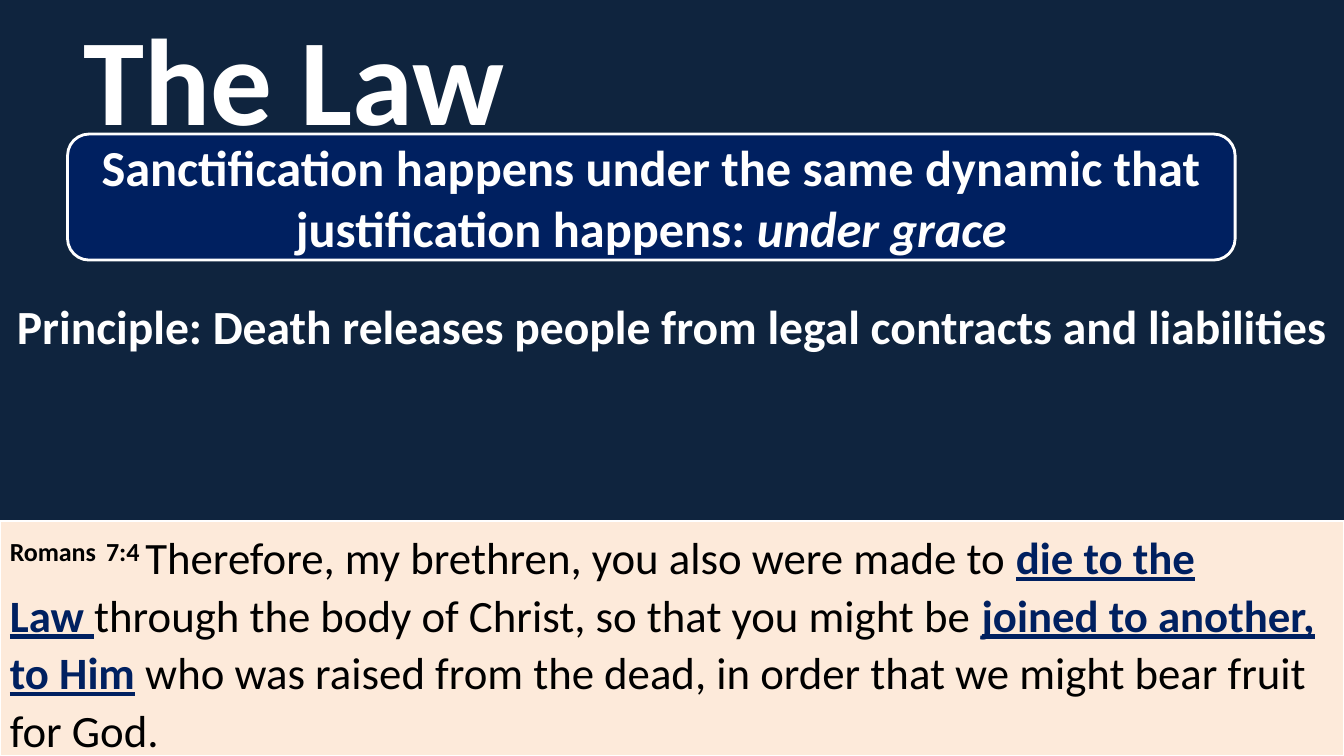
from dataclasses import dataclass

from pptx import Presentation
from pptx.dml.color import RGBColor as RGB
from pptx.enum.shapes import MSO_SHAPE as Form
from pptx.enum.text import MSO_ANCHOR as Anchor, MSO_AUTO_SIZE as Fit, PP_ALIGN as Align
from pptx.util import Inches, Pt


@dataclass(frozen=True)
class Theme:
    font: str = "Calibri"
    night: RGB = RGB(0x0F, 0x24, 0x3E)
    navy: RGB = RGB(0x00, 0x20, 0x60)
    cream: RGB = RGB(0xFD, 0xEA, 0xDA)
    white: RGB = RGB(0xFF, 0xFF, 0xFF)
    black: RGB = RGB(0x00, 0x00, 0x00)
    title: int = 88
    claim: int = 36
    rule: int = 34
    verse: int = 32


theme = Theme()


def add_box(form, box, fill=None, edge=0):
    """Add a shape; no fill colour or a zero edge leaves that part clear."""
    shape = slide.shapes.add_shape(form, *map(Inches, box))
    shape.shadow.inherit = False
    if fill is None:
        shape.fill.background()
    else:
        shape.fill.solid()
        shape.fill.fore_color.rgb = fill
    if edge:
        shape.line.color.rgb = theme.white
        shape.line.width = Pt(edge)
    else:
        shape.line.fill.background()
    return shape


def write(shape, size, runs, align=Align.CENTER, anchor=Anchor.MIDDLE, space=1.0):
    """Fill the shape with (text, colour, marks) runs; ~ is a non-breaking space."""
    frame = shape.text_frame
    frame.word_wrap = True
    frame.auto_size = Fit.NONE
    frame.vertical_anchor = anchor
    para = frame.paragraphs[0]
    para.alignment = align
    para.line_spacing = space
    for text, color, marks in runs:
        run = para.add_run()
        run.text = text.replace("~", chr(160))
        font = run.font
        font.name = theme.font
        font.size = Pt(size)
        font.color.rgb = color
        font.bold = "b" in marks
        font.italic = "i" in marks
        font.underline = "u" in marks
        if "^" in marks:
            font._element.set("baseline", "30000")


deck = Presentation()
deck.slide_width, deck.slide_height = Inches(13.33), Inches(7.5)
slide = deck.slides.add_slide(deck.slide_layouts[5])
slide.background.fill.solid()
slide.background.fill.fore_color.rgb = theme.night

# Title
title = slide.shapes.title
title.left, title.top = Inches(0.25), Inches(0.1)
title.width, title.height = Inches(5.33), Inches(1.32)
write(title, theme.title, [("The Law", theme.white, "b")])

# Bible verse
verse = add_box(Form.RECTANGLE, (0, 5.17, 13.33, 2.33), theme.cream, 1.5)
write(verse, theme.verse, [
    ("Romans", theme.black, "b^"),
    (" ", theme.black, "b"),
    ("7:4~", theme.black, "b^"),
    ("Therefore, my brethren, you also were~made to ", theme.black, ""),
    ("die~to the Law~", theme.navy, "bu"),
    ("through the body of Christ, so that you might be ", theme.black, ""),
    ("joined to another, to Him", theme.navy, "bu"),
    (" who was raised from the dead, in order that we might bear fruit for God.~",
     theme.black, ""),
], Align.LEFT, Anchor.TOP, 1.07)

# Claim and principle
claim = add_box(Form.ROUNDED_RECTANGULAR_CALLOUT, (0.67, 1.33, 11.58, 1.25), theme.navy, 2)
rule = add_box(Form.ROUNDED_RECTANGULAR_CALLOUT, (0, 2.58, 13.33, 1.25))
for callout in (claim, rule):
    for i, value in enumerate((-0.22, 0.5, 0.17)):
        callout.adjustments[i] = value
write(claim, theme.claim, [
    ("Sanctification happens under the same dynamic that justification happens: ",
     theme.white, "b"),
    ("under grace", theme.white, "bi"),
])
write(rule, theme.rule, [
    ("Principle: Death releases people from legal contracts and liabilities",
     theme.white, "b"),
], space=1.07)

deck.save("out.pptx")
